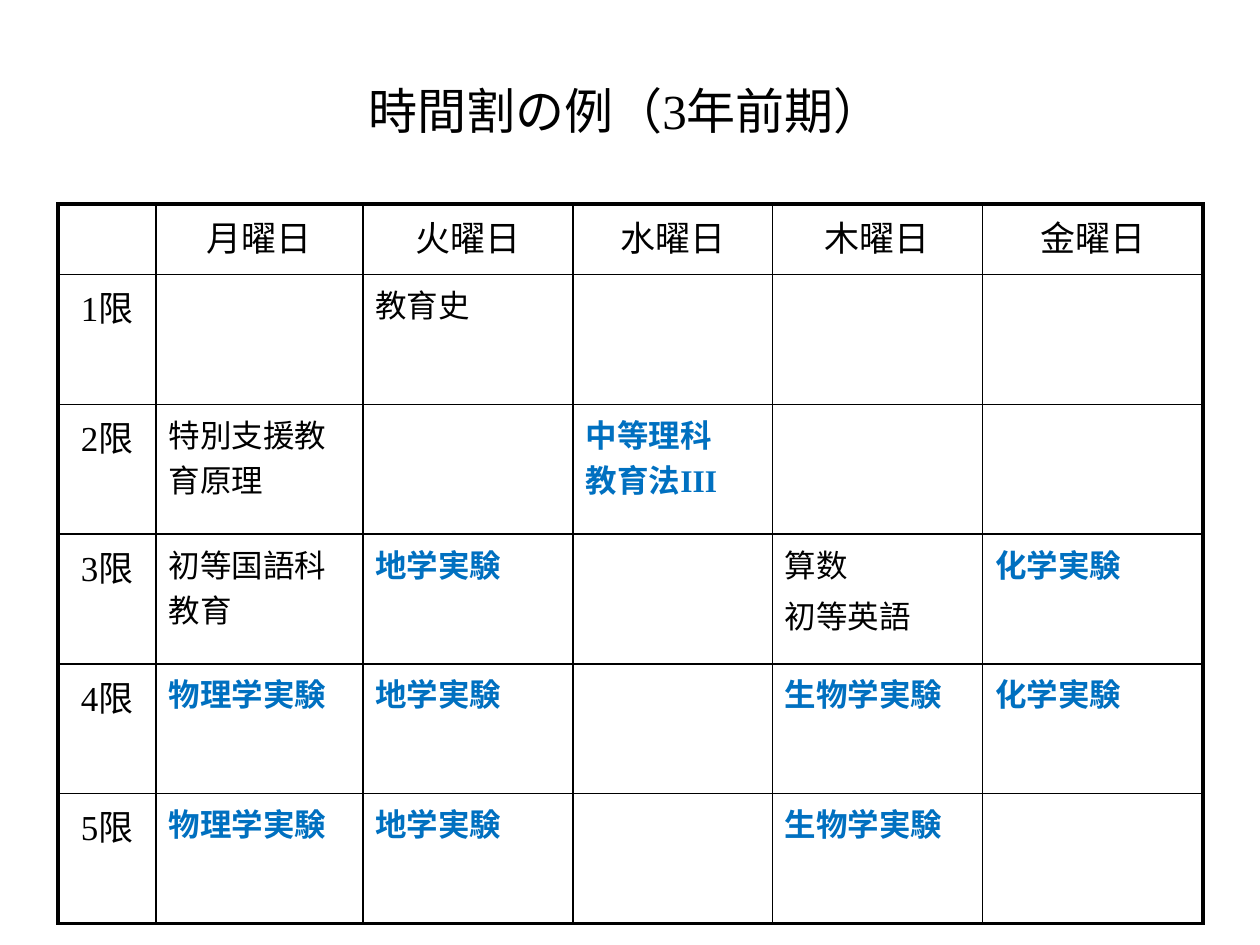
"""Build a slide with a weekly class timetable."""
from lxml.etree import SubElement
from pptx import Presentation
from pptx.dml.color import RGBColor
from pptx.enum.text import MSO_ANCHOR, MSO_AUTO_SIZE, PP_ALIGN
from pptx.oxml.ns import qn
from pptx.util import Inches, Pt

FONT = "Times New Roman"
COLORS = {"text": "000000", "science": "0070C0", "border": "000000"}
TITLE = "時間割の例（3年前期）"
DAYS = ["月曜日", "火曜日", "水曜日", "木曜日", "金曜日"]
PERIODS = ["1限", "2限", "3限", "4限", "5限"]
CLASSES = [
    ["", "教育史", "", "", ""],
    ["特別支援教育原理", "", "中等理科\n教育法III", "", ""],
    ["初等国語科教育", "地学実験", "", ["算数", "初等英語"], "化学実験"],
    ["物理学実験", "地学実験", "", "生物学実験", "化学実験"],
    ["物理学実験", "地学実験", "", "生物学実験", ""],
]
SCIENCE = {"中等理科\n教育法III", "地学実験", "物理学実験", "生物学実験", "化学実験"}
COLUMN_WIDTHS = [0.78, 1.64, 1.67, 1.58, 1.67, 1.75]
ROW_HEIGHTS = [0.56] + [1.03] * len(PERIODS)
INNER_LINE, OUTER_LINE = 1, 2.25


def write(frame, text, size=18, color="text", bold=False, align=PP_ALIGN.LEFT, before=0.2):
    lines = text if isinstance(text, list) else [text]
    for index, line in enumerate(lines):
        paragraph = frame.add_paragraph() if index else frame.paragraphs[0]
        paragraph.text = line
        paragraph.alignment = align
        paragraph.space_before = Pt(size * before)
        for run in paragraph.runs:
            run.font.name = FONT
            run.font.size = Pt(size)
            run.font.bold = bold
            run.font.color.rgb = RGBColor.from_string(COLORS[color])


def set_borders(cell, widths):
    properties = cell._tc.get_or_add_tcPr()
    for index, (side, width) in enumerate(widths.items()):
        line = SubElement(properties, qn(f"a:ln{side}"), w=str(Pt(width)))
        fill = SubElement(line, qn("a:solidFill"))
        SubElement(fill, qn("a:srgbClr"), val=COLORS["border"])
        properties.insert(index, line)


def add_title(slide):
    title = slide.shapes.title
    title.left, title.top = Inches(2.09), Inches(0.66)
    title.width, title.height = Inches(5.75), Inches(0.42)
    frame = title.text_frame
    frame.auto_size = MSO_AUTO_SIZE.NONE
    frame.word_wrap = True
    frame.vertical_anchor = MSO_ANCHOR.MIDDLE
    write(frame, TITLE, size=28, align=PP_ALIGN.CENTER, before=0)


def add_timetable(slide):
    rows = [[""] + DAYS] + [[period] + classes for period, classes in zip(PERIODS, CLASSES)]
    last_row, last_column = len(rows) - 1, len(DAYS)
    table = slide.shapes.add_table(
        len(rows), len(COLUMN_WIDTHS), Inches(0.46), Inches(1.62),
        Inches(sum(COLUMN_WIDTHS)), Inches(sum(ROW_HEIGHTS))).table
    for column, width in zip(table.columns, COLUMN_WIDTHS):
        column.width = Inches(width)
    for row, height in zip(table.rows, ROW_HEIGHTS):
        row.height = Inches(height)
    for i, row in enumerate(rows):
        for j, text in enumerate(row):
            cell = table.cell(i, j)
            cell.fill.background()
            outer = {"L": j == 0, "R": j == last_column, "T": i == 0, "B": i == last_row}
            set_borders(cell, {side: OUTER_LINE if edge else INNER_LINE
                               for side, edge in outer.items()})
            if i == 0 or j == 0:
                write(cell.text_frame, text, size=20, align=PP_ALIGN.CENTER)
            elif isinstance(text, str) and text in SCIENCE:
                write(cell.text_frame, text, color="science", bold=True)
            else:
                write(cell.text_frame, text)


def main():
    presentation = Presentation()
    presentation.slide_width, presentation.slide_height = Inches(10), Inches(7.5)
    slide = presentation.slides.add_slide(presentation.slide_layouts.get_by_name("Title Only"))
    add_title(slide)
    add_timetable(slide)
    presentation.save("out.pptx")


if __name__ == "__main__":
    main()
